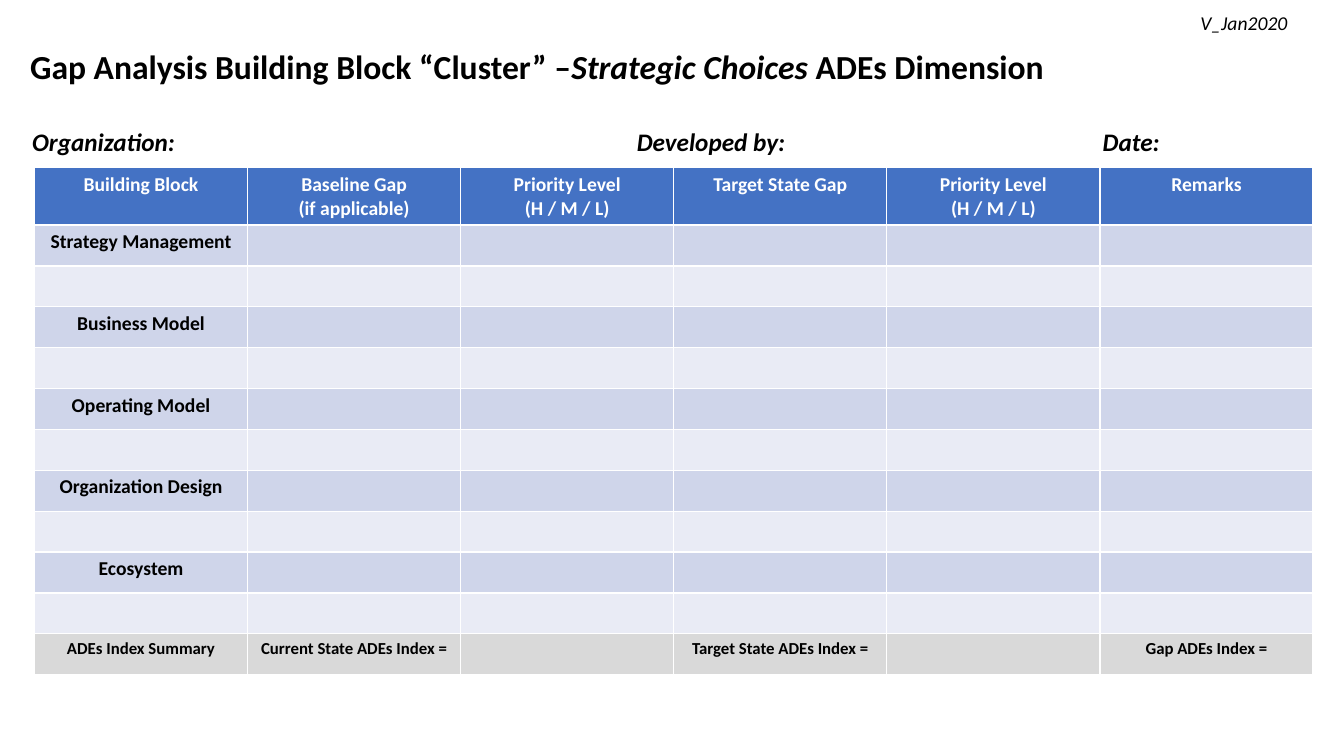
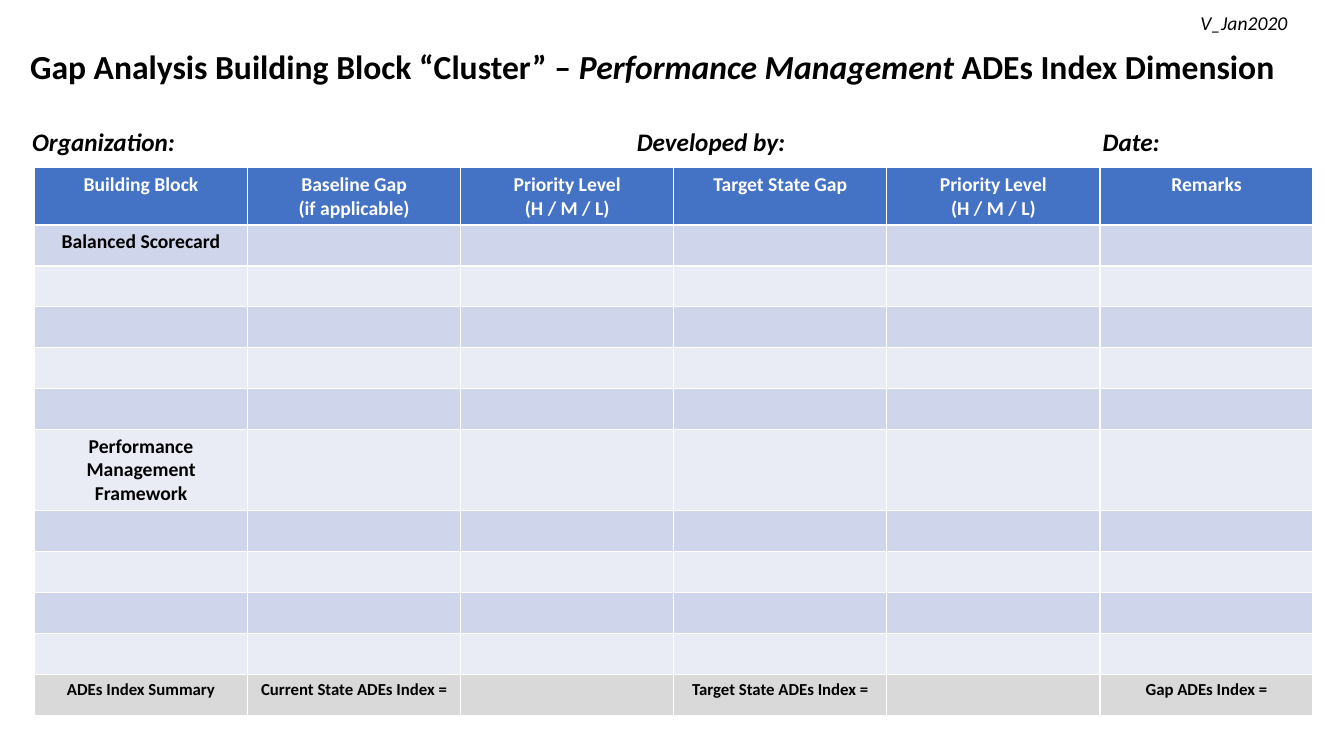
from dataclasses import dataclass

from pptx import Presentation
from pptx.dml.color import RGBColor as RGB
from pptx.enum.text import PP_ALIGN as ALIGN
from pptx.oxml.ns import qn
from pptx.util import Cm, Pt
from lxml.etree import SubElement


@dataclass(frozen=True)
class Theme:
    font: str = "Calibri"
    black: str = "000000"
    white: str = "FFFFFF"
    header: str = "4472C4"
    bands: tuple = ("CFD5EA", "E9EBF5")
    summary: str = "D9D9D9"
    title_size: int = 24
    details_size: int = 18
    body_size: int = 14
    summary_size: int = 12


THEME = Theme()

HEADERS = ["Building Block", "Baseline Gap\n(if applicable)",
           "Priority Level\n(H / M / L)", "Target State Gap",
           "Priority Level\n(H / M / L)", "Remarks"]
SUMMARY = ["ADEs Index Summary", "Current State ADEs Index =", "",
           "Target State ADEs Index =", "", "Gap ADEs Index ="]
DETAILS = ["Organization:", "Developed by:", "Date:"]
DETAIL_TABS = [15.24, 26.98]
VERSION = "V_Jan2020"

BODY_ROWS = 10
COL_W, HEADER_H, ROW_H, LINE_H = 5.37, 1.42, 1.03, 0.6


class GapDeck:
    def __init__(self, theme):
        self.theme = theme
        self.prs = Presentation()
        self.prs.slide_width, self.prs.slide_height = Cm(33.87), Cm(19.05)
        self.slide = None

    def new_slide(self):
        self.slide = self.prs.slides.add_slide(self.prs.slide_layouts[6])

    def add_run(self, p, text, size, color=None, **style):
        r = p.add_run()
        r.text = text
        r.font.color.rgb = RGB.from_string(color or self.theme.black)
        values = {"name": self.theme.font, "size": Pt(size), **style}
        for name, value in values.items():
            setattr(r.font, name, value)

    def text(self, x, y, w, h, runs, size, tabs=()):
        """Add a one-paragraph box; runs are (text, style) pairs, tabs are in cm."""
        sp = self.slide.shapes.add_textbox(Cm(x), Cm(y), Cm(w), Cm(h))
        tf = sp.text_frame
        tf.word_wrap = True
        p = tf.paragraphs[0]
        for text, style in runs:
            self.add_run(p, text, size, **style)
        if tabs:
            tab_list = SubElement(p._p.get_or_add_pPr(), qn("a:tabLst"))
            for pos in tabs:
                SubElement(tab_list, qn("a:tab"), pos=str(Cm(pos)), algn="l")

    def title(self, lead, dimension, tail):
        runs = [(lead, {"bold": True}),
                (dimension, {"bold": True, "italic": True}),
                (tail, {"bold": True})]
        self.text(0.51, 1.04, 32.5, 1.28, runs, self.theme.title_size)

    def details(self):
        runs = [("\t".join(DETAILS), {"bold": True, "italic": True})]
        self.text(0.56, 3.07, 32.3, 1.02, runs, self.theme.details_size, DETAIL_TABS)

    def version(self):
        self.text(30, 0.15, 3, 0.86, [(VERSION, {"italic": True})], self.theme.body_size)

    def table_row(self, row, height, texts, fill, size, color):
        row.height = Cm(height)
        for cell, text in zip(row.cells, texts):
            cell.fill.solid()
            cell.fill.fore_color.rgb = RGB.from_string(fill)
            if not text:
                continue
            tf = cell.text_frame
            for i, line in enumerate(text.split("\n")):
                p = tf.add_paragraph() if i else tf.paragraphs[0]
                p.alignment = ALIGN.CENTER
                self.add_run(p, line, size, color, bold=True)

    def gap_table(self, blocks):
        """Add the grid; blocks maps a body row to (name, lines the name takes)."""
        t = self.theme
        n_cols = len(HEADERS)
        frame = self.slide.shapes.add_table(
            BODY_ROWS + 2, n_cols, Cm(0.87), Cm(4.23),
            Cm(COL_W * n_cols), Cm(HEADER_H + ROW_H * (BODY_ROWS + 1)))
        table = frame.table
        for col in table.columns:
            col.width = Cm(COL_W)
        header, *body, summary = table.rows
        self.table_row(header, HEADER_H, HEADERS, t.header, t.body_size, t.white)
        for i, row in enumerate(body):
            name, lines = blocks.get(i, ("", 1))
            height = ROW_H if lines == 1 else lines * LINE_H + 0.25
            texts = [name] + [""] * (n_cols - 1)
            self.table_row(row, height, texts, t.bands[i % 2], t.body_size, t.black)
        self.table_row(summary, ROW_H, SUMMARY, t.summary, t.summary_size, t.black)

    def gap_slide(self, title, blocks):
        self.new_slide()
        self.title(*title)
        self.gap_table(blocks)
        self.details()
        self.version()


def main():
    deck = GapDeck(THEME)
    choices = ["Strategy Management", "Business Model", "Operating Model",
               "Organization Design", "Ecosystem"]
    deck.gap_slide(
        ("Gap Analysis Building Block “Cluster” –", "Strategic Choices ",
         "ADEs Dimension"),
        {2 * i: (name, 1) for i, name in enumerate(choices)})
    deck.gap_slide(
        ("Gap Analysis Building Block “Cluster” – ", "Performance Management ",
         "ADEs Index Dimension"),
        {0: ("Balanced Scorecard", 1),
         5: ("Performance Management Framework", 3)})
    deck.prs.save("out.pptx")


if __name__ == "__main__":
    main()
